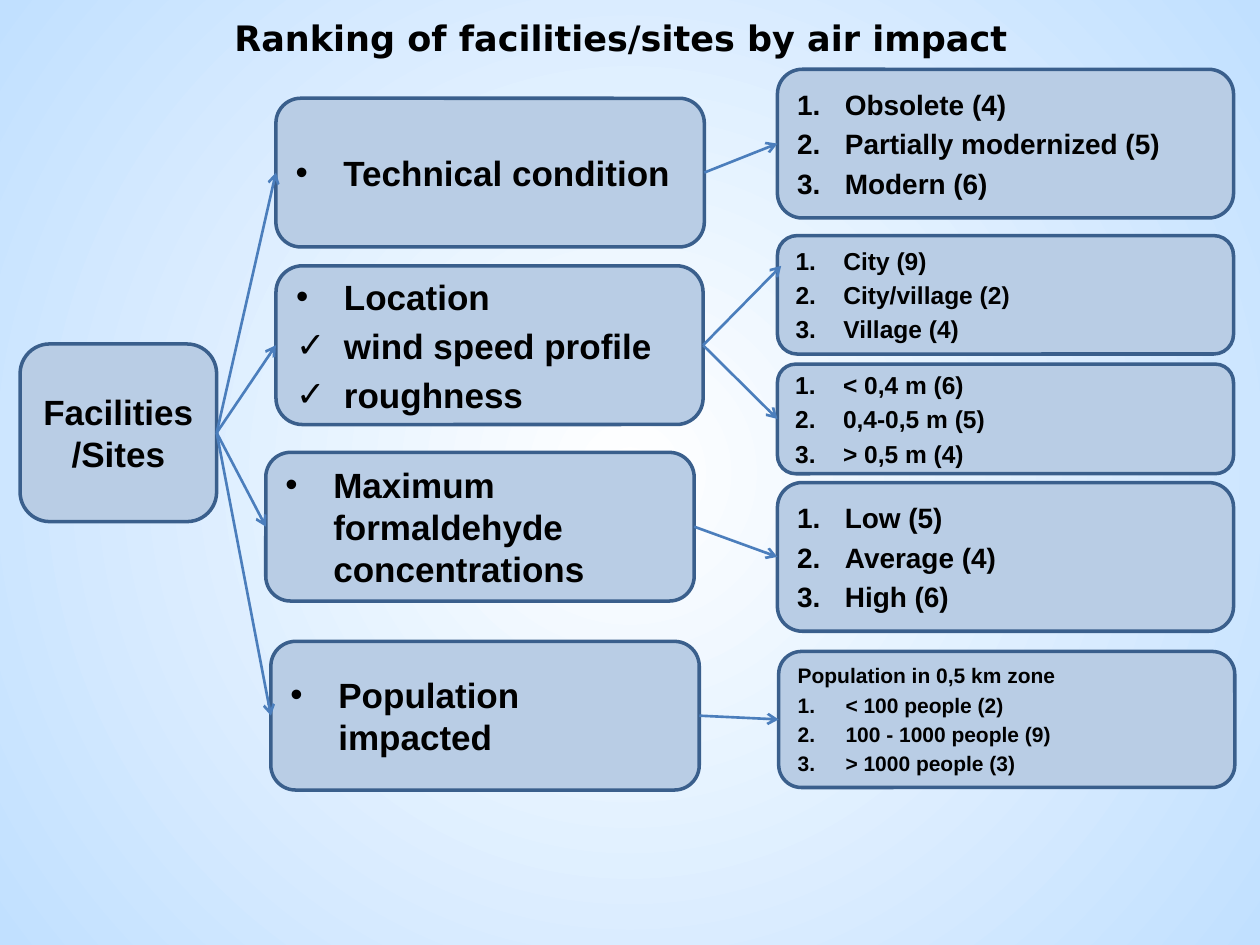
from lxml.etree import SubElement
from pptx import Presentation
from pptx.dml.color import RGBColor
from pptx.enum.shapes import MSO_CONNECTOR as CONN, MSO_SHAPE as SHAPE
from pptx.enum.text import MSO_ANCHOR as ANCHOR, PP_ALIGN as ALIGN
from pptx.oxml.ns import qn
from pptx.util import Inches, Pt

BLACK = RGBColor(0x00, 0x00, 0x00)
WHITE = RGBColor(0xFF, 0xFF, 0xFF)
SKY = RGBColor(0xC1, 0xE0, 0xFF)
BOX_FILL = RGBColor(0xB9, 0xCD, 0xE5)
BOX_LINE = RGBColor(0x3A, 0x5F, 0x8C)
ARROW = RGBColor(0x4B, 0x7E, 0xBC)

LEFT, RIGHT = 1, 3
DOT, CHECK, NUMBER = "•", "✓", "1."

# name: (left, top, width, height), size, [(marker, text), ...]
CRITERIA = {
    "concentration": ((2.11, 3.59, 3.4, 1.18), 20,
                      [(DOT, "Maximum formaldehyde concentrations")]),
    "condition": ((2.19, 0.78, 3.4, 1.18), 20, [(DOT, "Technical condition")]),
    "location": ((2.19, 2.11, 3.39, 1.26), 20,
                 [(DOT, "Location"), (CHECK, "wind speed profile"), (CHECK, "roughness")]),
    "population": ((2.15, 5.09, 3.4, 1.18), 20, [(DOT, "Population impacted")]),
}


def numbered(*texts):
    return [(NUMBER, text) for text in texts]


RATINGS = {
    "level": ((6.17, 3.83, 3.62, 1.18), 16, numbered("Low (5)", "Average (4)", "High (6)")),
    "age": ((6.17, 0.55, 3.62, 1.18), 16,
            numbered("Obsolete (4)", "Partially modernized (5)", "Modern (6)")),
    "settlement": ((6.17, 1.87, 3.62, 0.94), 14,
                   numbered("City (9)", "City/village (2)", "Village (4)")),
    "roughness": ((6.17, 2.89, 3.62, 0.87), 14,
                  numbered("< 0,4 m (6)", "0,4-0,5 m (5)", "> 0,5 m (4)")),
    "people": ((6.18, 5.17, 3.62, 1.08), 12,
               [(None, "Population in 0,5 km zone")]
               + numbered("< 100 people (2)", "100 - 1000 people (9)", "> 1000 people (3)")),
}

LINKS = [("population", "people"), ("location", "roughness"),
         ("condition", "age"), ("concentration", "level")]


class Diagram:
    font = "Arial"
    title_font = "DejaVu Sans"
    indent = 0.38

    def __init__(self, slide):
        self.s = slide

    def background(self, inner, outer):
        """Fill the slide with a gradient that runs from its centre outwards."""
        fill = self.s.background.fill
        fill.gradient()
        for stop, color, position in zip(fill.gradient_stops, (inner, outer), (0, 1)):
            stop.color.rgb = color
            stop.position = position
        grad = self.s._element.find(".//" + qn("a:gradFill"))
        grad.remove(grad.find(qn("a:lin")))
        circle = SubElement(grad, qn("a:path"), path="circle")
        SubElement(circle, qn("a:fillToRect"), {side: "50000" for side in "ltrb"})

    def format_text(self, p, size, font):
        for r in p.runs:
            r.font.size = Pt(size)
            r.font.name = font
            r.font.bold = True
            r.font.color.rgb = BLACK

    def title(self, text, at):
        sp = self.s.shapes.title
        sp.left, sp.top, sp.width, sp.height = map(Inches, at)
        tf = sp.text_frame
        tf.text = text
        tf.vertical_anchor = ANCHOR.MIDDLE
        tf.paragraphs[0].alignment = ALIGN.CENTER
        self.format_text(tf.paragraphs[0], 20, self.title_font)

    def box(self, at, size, text):
        sp = self.s.shapes.add_shape(SHAPE.ROUNDED_RECTANGLE, *map(Inches, at))
        sp.shadow.inherit = False
        sp.fill.solid()
        sp.fill.fore_color.rgb = BOX_FILL
        sp.line.color.rgb = BOX_LINE
        sp.line.width = Pt(2)
        tf = sp.text_frame
        tf.word_wrap = True
        tf.vertical_anchor = ANCHOR.MIDDLE
        tf.text = text
        for p in tf.paragraphs:
            p.alignment = ALIGN.CENTER
            self.format_text(p, size, self.font)
        return sp

    def list_box(self, at, size, items):
        sp = self.box(at, size, "\n".join(text for _, text in items))
        for p, (marker, _) in zip(sp.text_frame.paragraphs, items):
            p.alignment = ALIGN.LEFT
            self.mark(p, marker)
        return sp

    def mark(self, p, marker):
        """Give a paragraph its hanging indent, gap and bullet or number."""
        pPr = p._p.get_or_add_pPr()
        pPr.set("marL", str(Inches(self.indent)))
        pPr.set("indent", str(-Inches(self.indent)))
        gap = SubElement(pPr, qn("a:spcBef"))
        SubElement(gap, qn("a:spcPct"), val="20000")
        if marker == NUMBER:
            SubElement(pPr, qn("a:buFont"), typeface="+mj-lt")
            SubElement(pPr, qn("a:buAutoNum"), type="arabicPeriod")
        elif marker:
            SubElement(pPr, qn("a:buFont"), typeface=self.font)
            SubElement(pPr, qn("a:buChar"), char=marker)
        else:
            SubElement(pPr, qn("a:buNone"))

    def arrow(self, source, target, end=None):
        """Join two boxes side to side, or stop at the free point end."""
        x, y = map(Inches, end or (0, 0))
        line = self.s.shapes.add_connector(CONN.STRAIGHT, 0, 0, x, y)
        line.begin_connect(source, RIGHT)
        if target is not None:
            line.end_connect(target, LEFT)
        line.line.color.rgb = ARROW
        line.line.width = Pt(1.5)
        SubElement(line.line._get_or_add_ln(), qn("a:tailEnd"), type="arrow")
        SubElement(line._element.spPr, qn("a:effectLst"))


def main():
    prs = Presentation()
    prs.slide_width, prs.slide_height = Inches(10), Inches(7.5)
    diagram = Diagram(prs.slides.add_slide(prs.slide_layouts[5]))
    diagram.background(WHITE, SKY)
    diagram.title("Ranking of facilities/sites by air impact", (0.3, 0.13, 9.26, 0.34))

    sites = diagram.box((0.16, 2.73, 1.56, 1.41), 20, "Facilities/Sites")
    criteria = {name: diagram.list_box(*row) for name, row in CRITERIA.items()}
    ratings = {name: diagram.list_box(*row) for name, row in RATINGS.items()}

    for criterion in criteria.values():
        diagram.arrow(sites, criterion)
    for criterion, rating in LINKS:
        diagram.arrow(criteria[criterion], ratings[rating])
    diagram.arrow(criteria["location"], None, end=(6.2, 2.11))

    prs.save("out.pptx")


if __name__ == "__main__":
    main()
